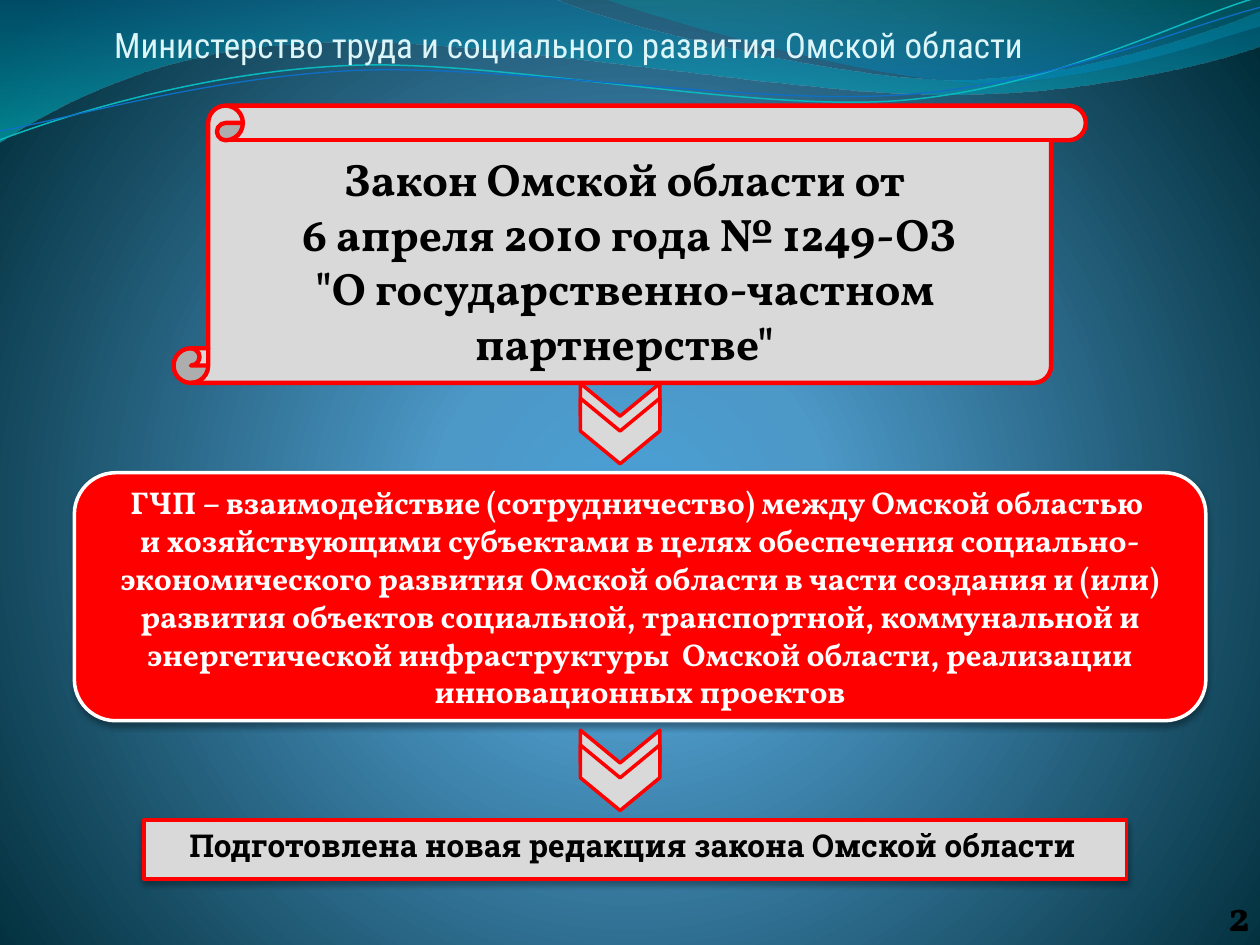
from lxml import etree
from pptx import Presentation
from pptx.dml.color import RGBColor
from pptx.enum.shapes import MSO_SHAPE
from pptx.enum.text import MSO_ANCHOR, MSO_AUTO_SIZE, PP_ALIGN
from pptx.oxml import parse_xml
from pptx.oxml.ns import qn
from pptx.util import Cm, Pt

CHEVRON = MSO_SHAPE.CHEVRON
ROUNDED = MSO_SHAPE.FLOWCHART_ALTERNATE_PROCESS
SCROLL = MSO_SHAPE.VERTICAL_SCROLL
RECTANGLE = MSO_SHAPE.RECTANGLE
TOP, MIDDLE, BOTTOM = MSO_ANCHOR.TOP, MSO_ANCHOR.MIDDLE, MSO_ANCHOR.BOTTOM
LEFT, CENTER, RIGHT = PP_ALIGN.LEFT, PP_ALIGN.CENTER, PP_ALIGN.RIGHT
NO_AUTOFIT = MSO_AUTO_SIZE.NONE

RED = RGBColor(0xFF, 0x00, 0x00)
GREY = RGBColor(0xD9, 0xD9, 0xD9)
WHITE = RGBColor(0xFF, 0xFF, 0xFF)
BLACK = RGBColor(0x00, 0x00, 0x00)
PALE = RGBColor(0xDB, 0xF5, 0xF9)
TEAL = RGBColor(0x0A, 0xB8, 0xBF)
BLUE = RGBColor(0x0F, 0x6F, 0xC6)
SKY = RGBColor(0x4A, 0xA0, 0xD6)
STEEL = RGBColor(0x4C, 0x98, 0xC7)
NIGHT = RGBColor(0x00, 0x2C, 0x38)
OCEAN = RGBColor(0x00, 0x74, 0xA1)
AQUA = RGBColor(0x00, 0xC6, 0xCF)
LAGOON = RGBColor(0x00, 0xA1, 0xA9)
AZURE = RGBColor(0x00, 0x8B, 0xBF)

DOWNWARD = '<a:lin ang="5400000" scaled="1"/>'
RADIAL = ('<a:path path="circle"><a:fillToRect l="10000" t="110000" '
          'r="10000" b="100000"/></a:path>')
NAMESPACE = 'xmlns:a="http://schemas.openxmlformats.org/drawingml/2006/main"'

WIDE_WAVE = [
    [(0, 0)], [(11.18, -0.03)],
    [(12.09, 0.43), (16.87, 1.6), (19.25, 1.6)],
    [(21.67, 1.6), (24.33, 0.66), (25.4, 0.23)], [(25.43, 0.91)],
    [(24.97, 1.12), (22.1, 1.93), (18.95, 1.9)],
    [(15.8, 1.9), (9.7, 0.71), (6.53, 0.86)],
    [(3.28, 0.91), (1.17, 2.11), (-0.03, 2.87)], [(0, 0)],
]
CORNER_WAVE = [
    [(12.17, -0.03)],
    [(12.93, 0.28), (17.32, 1.57), (19.53, 1.65)],
    [(21.74, 1.75), (24.41, 0.81), (25.4, 0.53)], [(25.4, 0)], [(12.17, -0.03)],
]
TEAL_CURVE = [
    [(0, 2.82)],
    [(1.22, 2.36), (4.01, 1.45), (7.04, 1.32)],
    [(10.03, 1.19), (15.06, 2.26), (18.11, 2.03)],
    [(21.16, 1.8), (23.83, 0.38), (25.35, -0.05)],
]
BLUE_CURVE = [
    [(0, 2.64)],
    [(1.19, 2.44), (4.17, 1.55), (7.19, 1.42)],
    [(10.24, 1.3), (15.16, 2.13), (18.21, 1.91)],
    [(21.23, 1.7), (23.9, 0.53), (25.4, 0.15)],
]


def gradient(stops, direction):
    """Return a gradient fill element from (position, colour, opacity) stops."""
    marks = "".join(
        f'<a:gs pos="{position * 1000}"><a:srgbClr val="{color}">'
        f'<a:alpha val="{opacity * 1000}"/></a:srgbClr></a:gs>'
        for position, color, opacity in stops)
    return parse_xml(f'<a:gradFill {NAMESPACE} rotWithShape="1">'
                     f'<a:gsLst>{marks}</a:gsLst>{direction}</a:gradFill>')


def add_curve(slide, box, segments, closed):
    """Draw straight and cubic segments relative to the box, without fill or line."""
    points = [(Cm(box[0] + x), Cm(box[1] + y)) for segment in segments for x, y in segment]
    builder = slide.shapes.build_freeform(*points[0])
    builder.add_line_segments(points[1:], close=closed)
    shape = builder.convert_to_shape()
    steps = iter(list(shape._element.iter(qn("a:lnTo"))))
    for segment in segments[1:]:
        first, *others = [next(steps) for _ in segment]
        if others:
            cubic = etree.Element(qn("a:cubicBezTo"))
            first.addprevious(cubic)
            for step in (first, *others):
                cubic.append(step[0])
                step.getparent().remove(step)
    shape.shadow.inherit = False
    shape.fill.background()
    shape.line.fill.background()
    return shape


def add_box(slide, kind, box, fill, line, width, shadow=False):
    """Add a filled and outlined preset shape, with a soft shadow if asked."""
    shape = slide.shapes.add_shape(kind, *map(Cm, box))
    shape.fill.solid()
    shape.fill.fore_color.rgb = fill
    shape.line.color.rgb = line
    shape.line.width = Pt(width)
    shape.shadow.inherit = False
    if shadow:
        effects = shape._element.spPr.find(qn("a:effectLst"))
        outer = etree.SubElement(effects, qn("a:outerShdw"), blurRad=str(Pt(3.5)),
                                 dist=str(Pt(2.2)), dir="5400000", rotWithShape="0")
        color = etree.SubElement(outer, qn("a:srgbClr"), val=str(BLACK))
        etree.SubElement(color, qn("a:alpha"), val="32000")
    return shape


def write(shape, *lines, font="Vollkorn", size=18, color=BLACK, bold=True,
          align=CENTER, anchor=TOP, margins=(0.25, 0.13, 0.25, 0.13)):
    """Write each line as a formatted paragraph of the shape."""
    frame = shape.text_frame
    frame.word_wrap = True
    frame.auto_size = NO_AUTOFIT
    frame.vertical_anchor = anchor
    (frame.margin_left, frame.margin_top,
     frame.margin_right, frame.margin_bottom) = map(Cm, margins)
    for index, line in enumerate(lines):
        paragraph = frame.add_paragraph() if index else frame.paragraphs[0]
        paragraph.text = line
        paragraph.alignment = align
        for run in paragraph.runs:
            run.font.name = font
            run.font.size = Pt(size)
            run.font.bold = bold
            run.font.color.rgb = color


def add_backdrop(slide, box):
    """Fill the background and draw the waves along the top of the box."""
    slide.background.fill.solid()
    properties = slide._element.cSld.find(qn("p:bg")).find(qn("p:bgPr"))
    properties.replace(properties[0], gradient(
        [(0, SKY, 100), (25, STEEL, 100), (100, NIGHT, 100)], RADIAL))
    for segments, stops in (
            (WIDE_WAVE, [(0, OCEAN, 45), (100, AQUA, 55)]),
            (CORNER_WAVE, [(0, LAGOON, 30), (80, AZURE, 45)])):
        properties = add_curve(slide, box, segments, True)._element.spPr
        properties.replace(properties.find(qn("a:noFill")), gradient(stops, DOWNWARD))
    for segments, color, width in ((TEAL_CURVE, TEAL, 0.85), (BLUE_CURVE, BLUE, 0.75)):
        shape = add_curve(slide, box, segments, False)
        shape.line.color.rgb = color
        shape.line.width = Pt(width)


def add_title(slide, box):
    """Place the ministry name in the title placeholder, above the waves."""
    title = slide.shapes.title
    title.left, title.top, title.width, title.height = map(Cm, box)
    write(title, "Министерство труда и социального развития Омской области",
          font="Roboto Condensed", size=20, color=PALE, bold=False,
          align=LEFT, anchor=BOTTOM, margins=(0, 0.13, 0, 0))
    slide.shapes._spTree.append(title._element)


def add_law(slide, box):
    """Add the scroll with the name of the law."""
    left, top, width, height = box
    add_box(slide, SCROLL, box, GREY, RED, 2.5)
    label = slide.shapes.add_textbox(Cm(left + 2), Cm(top + 0.79),
                                     Cm(width - 4.19), Cm(height - 0.89))
    write(label, "Закон Омской области от", " 6 апреля 2010 года № 1249-ОЗ",
          '"О государственно-частном партнерстве"', size=26)


def add_arrow(slide, box):
    """Add two overlapping chevrons that point down."""
    left, top, width, height = box
    for offset in (0, 0.3):
        chevron = add_box(slide, CHEVRON, (left, top + offset, width, height), GREY, RED, 2)
        chevron.rotation = 90


def add_definition(slide, box):
    """Add the red panel that defines the partnership."""
    panel = add_box(slide, ROUNDED, box, RED, WHITE, 2, shadow=True)
    write(panel, "ГЧП – взаимодействие (сотрудничество) между Омской областью \n"
          "и хозяйствующими субъектами в целях обеспечения социально-экономического "
          "развития Омской области в части создания и (или) развития объектов "
          "социальной, транспортной, коммунальной и энергетической инфраструктуры  "
          "Омской области, реализации инновационных проектов",
          color=WHITE, anchor=MIDDLE)


def add_outcome(slide, box):
    """Add the bar that states the outcome."""
    left, top, width, height = box
    add_box(slide, RECTANGLE, box, GREY, RED, 2, shadow=True)
    label = slide.shapes.add_textbox(Cm(left - 0.2), Cm(top), Cm(width + 0.3), Cm(height - 0.17))
    write(label, "Подготовлена новая редакция закона Омской области", font="Roboto Slab")


def add_page_number(slide, box):
    """Add the page number."""
    label = slide.shapes.add_textbox(*map(Cm, box))
    write(label, "2", size=24, align=RIGHT, anchor=BOTTOM, margins=(0, 0, 0, 0))


def main():
    """Build the slide and save it."""
    presentation = Presentation()
    presentation.slide_width, presentation.slide_height = Cm(25.4), Cm(19.05)
    slide = presentation.slides.add_slide(presentation.slide_layouts[5])
    add_backdrop(slide, (0, 0, 25.4, 19.05))
    add_arrow(slide, (11.84, 7.59, 1.32, 1.6))
    add_definition(slide, (1.5, 9.53, 22.81, 5))
    add_page_number(slide, (23.09, 17.93, 2.11, 1.02))
    add_law(slide, (3.5, 2.13, 18.39, 5.59))
    add_title(slide, (2.3, 0.13, 21.41, 1.19))
    add_arrow(slide, (11.84, 14.58, 1.32, 1.6))
    add_outcome(slide, (2.9, 16.53, 19.81, 1.19))
    presentation.save("out.pptx")


if __name__ == "__main__":
    main()
